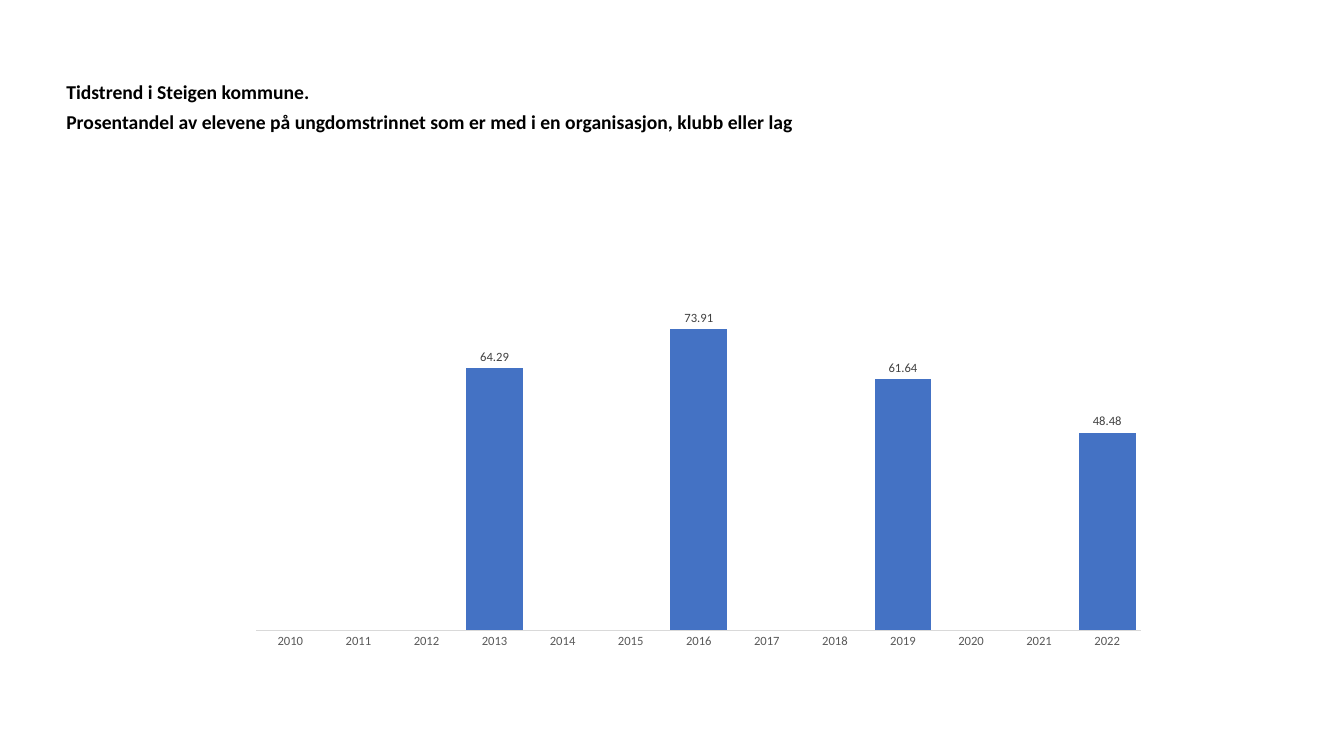
from collections import namedtuple
from dataclasses import dataclass

from lxml import etree
from pptx import Presentation, util as u
from pptx.chart import data as chart_data
from pptx.dml import color
from pptx.enum import chart as chart_enum, text
from pptx.oxml import ns

Box = namedtuple("Box", "left top width height")


@dataclass(frozen=True)
class Theme:
    font: str = "Calibri"
    heading: str = "000000"
    bar: str = "4472C4"
    axis_text: str = "595959"
    axis_line: str = "D9D9D9"
    label_text: str = "404040"
    heading_size: float = 14
    chart_size: float = 10
    label_size: float = 9


THEME = Theme()

HEADING = [
    "Tidstrend i Steigen kommune.\u00a0",
    "Prosentandel av elevene på ungdomstrinnet som er med i en organisasjon, klubb eller lag",
]
YEARS = range(2010, 2023)
SHARES = {2013: 64.29, 2016: 73.91, 2019: 61.64, 2022: 48.48}


def set_values(target, values):
    for name, value in values.items():
        setattr(target, name, value)


def style_font(font, size, colour, bold=False):
    set_values(font, {"name": THEME.font, "size": u.Pt(size), "bold": bold})
    font.color.rgb = color.RGBColor.from_string(colour)


def add_heading(page, box, lines):
    frame = page.shapes.add_textbox(*map(u.Pt, box)).text_frame
    set_values(frame, {"word_wrap": True, "vertical_anchor": text.MSO_ANCHOR.TOP})
    for index, line in enumerate(lines):
        para = frame.add_paragraph() if index else frame.paragraphs[0]
        set_values(para, {"line_spacing": 0.9, "space_after": u.Pt(6)})
        span = para.add_run()
        span.text = line
        style_font(span.font, THEME.heading_size, THEME.heading, bold=True)


def fix_plot_area(chart, x, y, w, h):
    """Place the inner plot area, in fractions of the chart frame."""
    plot_area = chart.element.find(".//" + ns.qn("c:plotArea"))
    for layout in plot_area.findall(ns.qn("c:layout")):
        plot_area.remove(layout)
    layout = etree.Element(ns.qn("c:layout"))
    plot_area.insert(0, layout)
    manual = etree.SubElement(layout, ns.qn("c:manualLayout"))
    values = {"layoutTarget": "inner", "xMode": "edge", "yMode": "edge",
              "x": x, "y": y, "w": w, "h": h}
    for name, value in values.items():
        etree.SubElement(manual, ns.qn(f"c:{name}")).set("val", str(value))


def add_trend_chart(page, box, years, shares):
    figures = chart_data.CategoryChartData(number_format="0.00")
    figures.categories = [str(year) for year in years]
    figures.add_series("Series 1", [shares.get(year) for year in years])
    chart = page.shapes.add_chart(
        chart_enum.XL_CHART_TYPE.COLUMN_CLUSTERED, *map(u.Pt, box), figures
    ).chart
    set_values(chart, {"has_title": False, "has_legend": False})
    style_font(chart.font, THEME.chart_size, THEME.heading)
    fix_plot_area(chart, 0.006, 0.123, 0.992, 0.739)

    set_values(chart.value_axis, {
        "minimum_scale": 0.1, "maximum_scale": 100.1,
        "has_major_gridlines": False, "visible": False,
    })
    year_axis = chart.category_axis
    set_values(year_axis, {
        "major_tick_mark": chart_enum.XL_TICK_MARK.NONE,
        "minor_tick_mark": chart_enum.XL_TICK_MARK.NONE,
        "has_major_gridlines": False,
    })
    style_font(year_axis.tick_labels.font, THEME.label_size, THEME.axis_text)
    line = year_axis.format.line
    line.width = u.Pt(0.75)
    line.color.rgb = color.RGBColor.from_string(THEME.axis_line)

    plot = chart.plots[0]
    set_values(plot, {"gap_width": 20, "overlap": -10, "vary_by_categories": False})
    bars = plot.series[0]
    bars.format.fill.solid()
    bars.format.fill.fore_color.rgb = color.RGBColor.from_string(THEME.bar)
    labels = bars.data_labels
    set_values(labels, {
        "show_value": True, "number_format": "0.00",
        "number_format_is_linked": False,
        "position": chart_enum.XL_LABEL_POSITION.OUTSIDE_END,
    })
    style_font(labels.font, THEME.label_size, THEME.label_text)


def main():
    deck = Presentation()
    set_values(deck, {"slide_width": u.Pt(960), "slide_height": u.Pt(540)})
    page = deck.slides.add_slide(deck.slide_layouts[6])
    add_heading(page, Box(40.3, 55.4, 840.2, 54.7), HEADING)
    add_trend_chart(page, Box(179.3, 110.2, 637.2, 394.6), YEARS, SHARES)
    deck.save("out.pptx")


if __name__ == "__main__":
    main()
